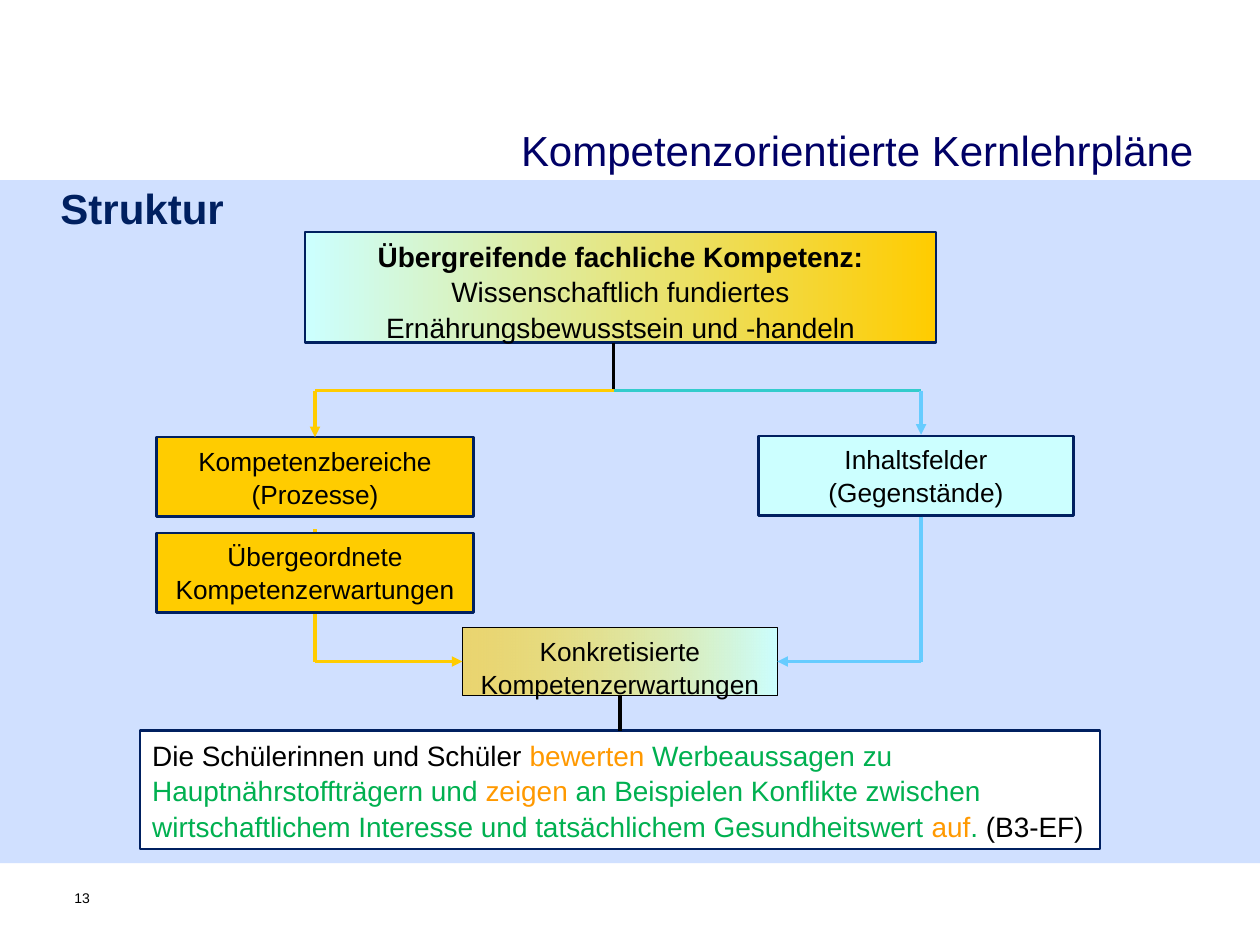
import pptx
import pptx.dml.color
import pptx.enum.shapes
import pptx.enum.text
import pptx.oxml.ns
import pptx.util
from dataclasses import dataclass
from lxml import etree

Inches = pptx.util.Inches
Pt = pptx.util.Pt
qn = pptx.oxml.ns.qn
Align = pptx.enum.text.PP_ALIGN
Anchor = pptx.enum.text.MSO_ANCHOR
TOP, LEFT, BOTTOM, RIGHT = range(4)


@dataclass(frozen=True)
class Theme:
    font: str = "Arial"
    black: str = "000000"
    white: str = "FFFFFF"
    band: str = "6699FF"
    navy: str = "002060"
    header: str = "000066"
    yellow: str = "FFCC00"
    pale: str = "CCFFFF"
    teal: str = "33CCCC"
    sky: str = "66CCFF"
    orange: str = "FF9900"
    green: str = "00B050"
    heading_size: float = 24
    body_size: float = 16
    box_size: float = 15
    number_size: float = 8
    box_spacing: float = 1.05


THEME = Theme()


def rgb(value):
    return pptx.dml.color.RGBColor.from_string(value)


def set_alpha(color_element, percent):
    etree.SubElement(color_element, qn("a:alpha"), val=str(percent * 1000))


def style_run(run, size, color, bold=False):
    run.font.name = THEME.font
    run.font.size = Pt(size)
    run.font.bold = bold
    run.font.color.rgb = rgb(color)


def write_lines(frame, lines, size, align, color=THEME.black, bold_first=False):
    frame.word_wrap = True
    frame.text = "\n".join(lines)
    for index, paragraph in enumerate(frame.paragraphs):
        paragraph.alignment = align
        for run in paragraph.runs:
            style_run(run, size, color, bold_first and index == 0)


def add_box(slide, at, fill, border=THEME.navy, border_width=1.5):
    """Rectangle with a plain fill, or a left-to-right gradient for a pair."""
    box = slide.shapes.add_shape(
        pptx.enum.shapes.MSO_SHAPE.RECTANGLE, *map(Inches, at))
    box.shadow.inherit = False
    if isinstance(fill, tuple):
        box.fill.gradient()
        box.fill.gradient_angle = 0
        for stop, color in zip(box.fill.gradient_stops, fill):
            stop.color.rgb = rgb(color)
    else:
        box.fill.solid()
        box.fill.fore_color.rgb = rgb(fill)
    if border:
        box.line.color.rgb = rgb(border)
        box.line.width = Pt(border_width)
    else:
        box.line.fill.background()
    box.text_frame.vertical_anchor = Anchor.TOP
    return box


def add_topic(slide, at, fill, lines, size=THEME.box_size, bold_first=False, **border):
    topic = add_box(slide, at, fill, **border)
    write_lines(topic.text_frame, lines, size, Align.CENTER, bold_first=bold_first)
    for paragraph in topic.text_frame.paragraphs:
        paragraph.line_spacing = THEME.box_spacing
    return topic


def add_label(slide, at, text, size, color, align=Align.LEFT, bold=False,
              anchor=Anchor.MIDDLE, left_inset=0, right_inset=0):
    frame = slide.shapes.add_textbox(*map(Inches, at)).text_frame
    frame.margin_left, frame.margin_right = Inches(left_inset), Inches(right_inset)
    frame.margin_top = frame.margin_bottom = 0
    frame.vertical_anchor = anchor
    write_lines(frame, [text], size, align, color, bold)


def add_line(slide, start, end, color, arrow=False, begin=None, finish=None):
    """Straight line; begin and finish are (box, side) pairs to join."""
    line = slide.shapes.add_connector(
        pptx.enum.shapes.MSO_CONNECTOR.STRAIGHT, *map(Inches, start + end))
    line.line.color.rgb = rgb(color)
    line.line.width = Pt(2)
    if arrow:
        etree.SubElement(line.line._get_or_add_ln(), qn("a:tailEnd"), type="triangle")
    etree.SubElement(line._element.spPr, qn("a:effectLst"))
    if begin:
        line.begin_connect(*begin)
    if finish:
        line.end_connect(*finish)


def add_example(slide, at, parts):
    example = add_box(slide, at, THEME.white)
    example.text_frame.word_wrap = True
    paragraph = example.text_frame.paragraphs[0]
    paragraph.alignment = Align.LEFT
    paragraph.line_spacing = THEME.box_spacing
    for text, color in parts:
        run = paragraph.add_run()
        run.text = text
        style_run(run, THEME.body_size, color)
    return example


def main():
    deck = pptx.Presentation()
    deck.slide_width, deck.slide_height = Inches(10), Inches(7.5)
    slide = deck.slides.add_slide(deck.slide_layouts[6])

    # Background band and headings
    band = add_box(slide, (0, 1.43, 10, 5.42), THEME.band, border=None)
    set_alpha(band.fill._xPr.find(".//" + qn("a:srgbClr")), 30)
    add_label(slide, (0.33, 1.41, 8.82, 0.47), "Struktur", THEME.heading_size,
              THEME.navy, bold=True, left_inset=0.15)
    add_label(slide, (3.54, 0.93, 6.03, 0.51), "Kompetenzorientierte Kernlehrpläne",
              THEME.heading_size, THEME.header, Align.RIGHT, right_inset=0.1)

    # Boxes
    concrete = add_topic(slide, (3.67, 4.98, 2.5, 0.54), (THEME.yellow, THEME.pale),
                         ["Konkretisierte", "Kompetenzerwartungen"],
                         border=THEME.black, border_width=0.75)
    set_alpha(concrete.fill._xPr.find(".//" + qn("a:srgbClr")), 56)
    example = add_example(slide, (1.11, 5.8, 7.62, 0.94), [
        ("Die Schülerinnen und Schüler ", THEME.black),
        ("bewerten ", THEME.orange),
        ("Werbeaussagen zu Hauptnährstoffträgern und ", THEME.green),
        ("zeigen", THEME.orange),
        (" an Beispielen Konflikte zwischen wirtschaftlichem Interesse und "
         "tatsächlichem Gesundheitswert ", THEME.green),
        ("auf", THEME.orange),
        (". ", THEME.green),
        ("(B3-EF)", THEME.black),
    ])
    processes = add_topic(slide, (1.24, 3.47, 2.52, 0.63), THEME.yellow,
                          ["Kompetenzbereiche", "(Prozesse)"])
    add_topic(slide, (2.42, 1.84, 5.01, 0.88), (THEME.pale, THEME.yellow),
              ["Übergreifende fachliche Kompetenz:",
               "Wissenschaftlich fundiertes Ernährungsbewusstsein und -handeln"],
              THEME.body_size, bold_first=True)
    add_topic(slide, (6.02, 3.46, 2.5, 0.63), THEME.pale,
              ["Inhaltsfelder", "(Gegenstände)"])

    # Branches from the overall competence, then back to the concrete one
    trunk_x, left_x, right_x = 4.87, 2.5, 7.31
    fork_y, merge_y = 3.1, 5.25
    add_line(slide, (trunk_x, 2.72), (trunk_x, fork_y), THEME.black)
    add_line(slide, (trunk_x, fork_y), (left_x, fork_y), THEME.yellow)
    add_line(slide, (trunk_x, fork_y), (right_x, fork_y), THEME.teal)
    add_line(slide, (left_x, fork_y), (left_x, 3.47), THEME.yellow, arrow=True,
             finish=(processes, TOP))
    add_line(slide, (right_x, fork_y), (right_x, 3.45), THEME.sky, arrow=True)
    add_line(slide, (left_x, 4.2), (left_x, merge_y), THEME.yellow)
    add_line(slide, (right_x, 4.1), (right_x, merge_y), THEME.sky)
    add_line(slide, (left_x, merge_y), (3.67, merge_y), THEME.yellow, arrow=True,
             finish=(concrete, LEFT))
    add_line(slide, (right_x, merge_y), (6.17, merge_y), THEME.sky, arrow=True,
             finish=(concrete, RIGHT))
    add_line(slide, (4.92, 5.52), (4.92, 5.8), THEME.black,
             begin=(concrete, BOTTOM), finish=(example, TOP))

    # Box that lies over the left branch
    add_topic(slide, (1.24, 4.23, 2.52, 0.63), THEME.yellow,
              ["Übergeordnete Kompetenzerwartungen"])

    # Slide number
    add_label(slide, (0.59, 7.06, 0.32, 0.37), "13", THEME.number_size, THEME.black,
              anchor=Anchor.TOP)

    deck.save("out.pptx")


if __name__ == "__main__":
    main()
